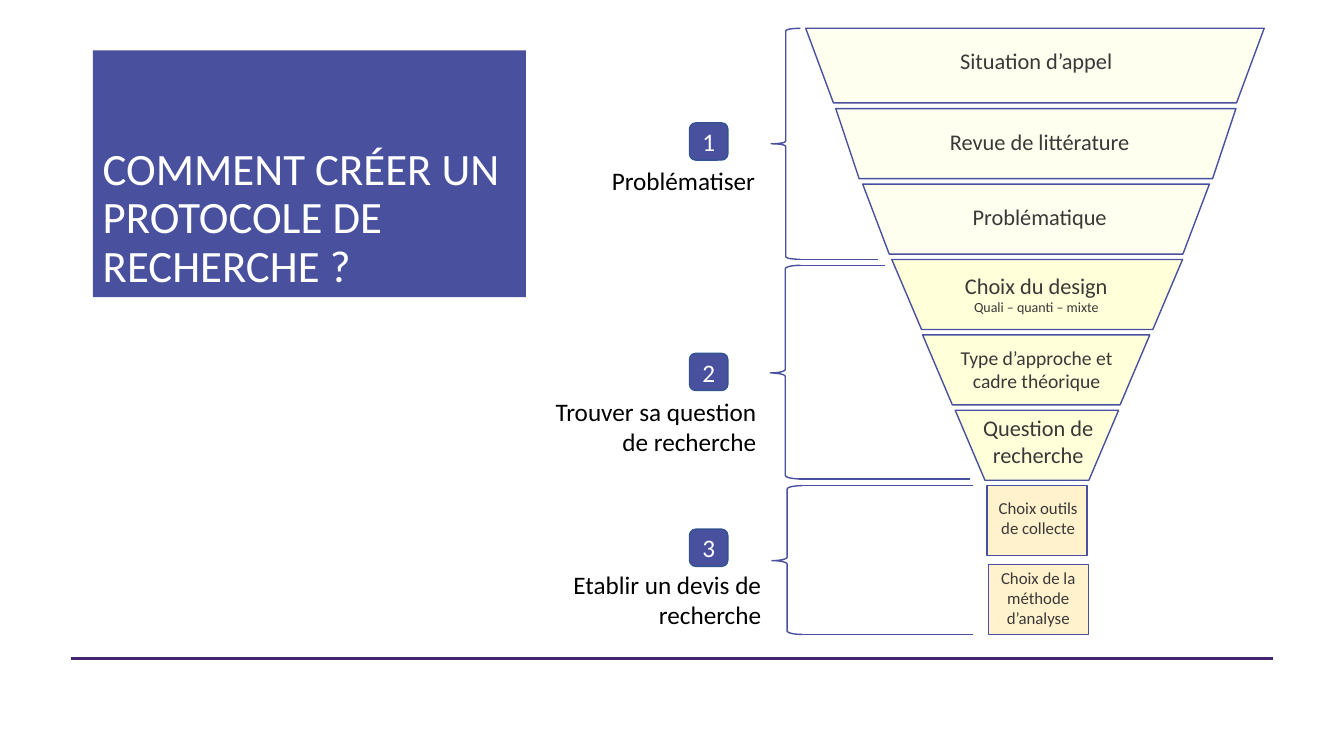
from lxml import etree
from pptx import Presentation
from pptx.dml.color import RGBColor
from pptx.enum import shapes, text
from pptx.oxml import ns
from pptx.util import Pt

COLORS = {
    "indigo": "49519E", "badge_edge": "325491", "violet": "412672",
    "ivory": "FFFFEF", "lemon": "FFFFD9", "sand": "FFF2CC",
    "white": "FFFFFF", "black": "000000", "charcoal": "3B3838",
}
SHAPE = shapes.MSO_SHAPE
ALIGN = text.PP_ALIGN
ANCHOR = text.MSO_ANCHOR


class Board:
    """Holds the style and the current slide; all lengths are in points."""

    font = "Calibri"

    def __init__(self, page):
        self.page = page

    def color(self, name):
        return RGBColor.from_string(COLORS[name])

    def shape(self, kind, left, top, width, height, fill=None, line="indigo",
              adjust=(), rotation=0):
        shape = self.page.shapes.add_shape(
            kind, Pt(left), Pt(top), Pt(width), Pt(height))
        shape.shadow.inherit = False
        shape.rotation = rotation
        for index, value in enumerate(adjust):
            shape.adjustments[index] = value
        if fill:
            shape.fill.solid()
            shape.fill.fore_color.rgb = self.color(fill)
        else:
            shape.fill.background()
        if line:
            shape.line.color.rgb = self.color(line)
            shape.line.width = Pt(1)
        else:
            shape.line.fill.background()
        return shape

    def add_text(self, box, lines, color, align, anchor=ANCHOR.TOP,
                 spacing=None):
        """Each line is a (wording, size) pair and makes one paragraph."""
        frame = box.text_frame
        frame.word_wrap = True
        frame.vertical_anchor = anchor
        for index, (wording, size) in enumerate(lines):
            para = frame.add_paragraph() if index else frame.paragraphs[0]
            para.alignment = align
            para.line_spacing = spacing
            span = para.add_run()
            span.text = wording
            span.font.color.rgb = self.color(color)
            for key, value in {"name": self.font, "size": Pt(size)}.items():
                setattr(span.font, key, value)

    def label(self, left, top, width, height, lines, color="charcoal",
              align=ALIGN.CENTER):
        box = self.page.shapes.add_textbox(
            Pt(left), Pt(top), Pt(width), Pt(height))
        self.add_text(box, lines, color, align)

    def rule(self, left, right, y, color="indigo", weight=1):
        rule = self.page.shapes.add_connector(
            shapes.MSO_CONNECTOR.STRAIGHT, Pt(left), Pt(y), Pt(right), Pt(y))
        rule.line.color.rgb = self.color(color)
        rule.line.width = Pt(weight)
        etree.SubElement(rule._element.spPr, ns.qn("a:effectLst"))

    def badge(self, top, number):
        badge = self.shape(SHAPE.ROUNDED_RECTANGLE, 492.5, top, 27.4, 26.6,
                           "indigo", "badge_edge")
        for side in ("left", "right", "top", "bottom"):
            setattr(badge.text_frame, f"margin_{side}", 0)
        self.add_text(badge, [(str(number), 18)], "white", ALIGN.CENTER,
                      ANCHOR.MIDDLE)


def main():
    deck = Presentation()
    deck.slide_width, deck.slide_height = Pt(960), Pt(540)
    board = Board(deck.slides.add_slide(deck.slide_layouts[6]))

    # Footer rule and title
    board.rule(50.6, 909.4, 470.2, "violet", 2.25)
    title = board.shape(SHAPE.RECTANGLE, 66.3, 36, 309.4, 176.2, "indigo", None)
    board.add_text(title, [("COMMENT CRÉER UN PROTOCOLE DE RECHERCHE ?", 32)],
                   "white", ALIGN.LEFT, ANCHOR.BOTTOM, 0.9)

    # Funnel: a taller first stage, then an even pitch
    funnel_top, second_top, pitch, stage_height = 20.2, 77.6, 53.86, 50
    stages = [
        (575.5, 327.5, 0.371, "ivory"), (597, 285.8, 0.333, "ivory"),
        (616.2, 247.7, 0.379, "ivory"), (637, 207.7, 0.425, "lemon"),
        (659, 162.3, 0.425, "lemon"), (682.3, 116.7, 0.425, "lemon"),
    ]
    for index, (left, width, slant, fill) in enumerate(stages):
        top = second_top + pitch * (index - 1) if index else funnel_top
        height = stage_height if index else 53.3
        board.shape(SHAPE.TRAPEZOID, left, top, width, height, fill,
                    adjust=[slant], rotation=180)
    for left, top in [(705, 346.9), (706, 403.2)]:
        board.shape(SHAPE.RECTANGLE, left, top, 71.4, stage_height, "sand")

    # Stage wording
    for left, top, width, height, *lines in [
        (671.8, 30.2, 136.8, 26.6, ("Situation d’appel", 16)),
        (663.8, 87.8, 157.7, 26.6, ("Revue de littérature", 16)),
        (681.1, 141.8, 123.1, 26.6, ("Problématique", 16)),
        (676.1, 190.8, 128.2, 38.9, ("Choix du design", 16),
         ("Quali – quanti – mixte", 10)),
        (676.8, 243.4, 127.4, 41, ("Type d’approche et cadre théorique", 14)),
        (683.3, 292.3, 116.6, 46.1, ("Question de recherche", 16)),
        (703.4, 352.1, 76.3, 36, ("Choix outils de collecte", 12)),
        (691.9, 401.8, 99.4, 51.1, ("Choix de la méthode d’analyse", 12)),
    ]:
        board.label(left, top, width, height, lines)

    # Braces and the rules that extend them to the funnel
    for left, top, width, height, adjust in [
        (550.8, 20.2, 20.9, 165, ()),
        (550.2, 189.5, 21.5, 152.6, (0.115, 0.504)),
        (551.5, 346.9, 21.5, 106.3, (0.115, 0.504)),
    ]:
        board.shape(SHAPE.LEFT_BRACE, left, top, width, height, adjust=adjust)
    for left, right, y in [
        (571.7, 627.1, 185.2), (569.5, 632.2, 189.5), (571, 692.6, 342.1),
        (573.1, 694.8, 346.9), (573.1, 694.8, 453.2),
    ]:
        board.rule(left, right, y)

    # Numbered phases
    for number, (badge_top, left, top, width, height, wording) in enumerate([
        (87.8, 424.8, 114.5, 121.7, 28.8, "Problématiser"),
        (252.4, 385.2, 279.4, 162, 51.1, "Trouver sa question de recherche"),
        (378, 388.8, 403.2, 162, 51.1, "Etablir un devis de recherche"),
    ], 1):
        board.badge(badge_top, number)
        board.label(left, top, width, height, [(wording, 18)], "black",
                    ALIGN.RIGHT)

    deck.save("out.pptx")


if __name__ == "__main__":
    main()
